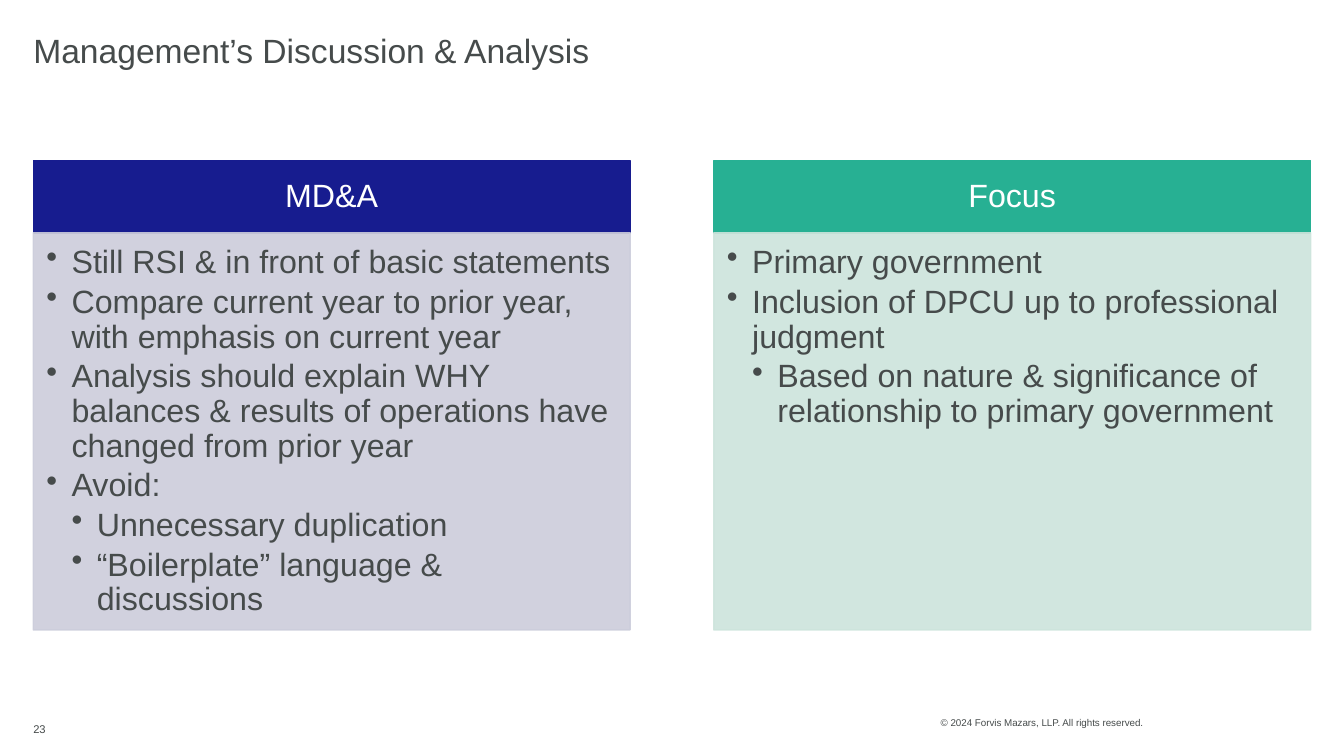
import pptx
import pptx.util
import pptx.dml.color
import pptx.enum.shapes
import pptx.enum.text
import pptx.oxml.ns
import lxml.etree

Inches = pptx.util.Inches
Pt = pptx.util.Pt
ANCHOR = pptx.enum.text.MSO_ANCHOR
ALIGN = pptx.enum.text.PP_ALIGN
qn = pptx.oxml.ns.qn

WIDTH, HEIGHT = 13.33, 7.5
MARGIN = 0.33
GUTTER = 0.83
COLUMN_W = (WIDTH - 2 * MARGIN - GUTTER) / 2
COLUMN_TOP, COLUMN_H = 1.59, 4.66
HEADER_H = 0.72
INDENT = 0.25
GREY, WHITE = "464B4B", "FFFFFF"

COLUMNS = [
    ("MD&A", "171C8F", "CCCDDB", [
        (0, "Still RSI & in front of basic statements"),
        (0, "Compare current year to prior year, with emphasis on current year"),
        (0, "Analysis should explain WHY balances & results of operations have changed from prior year"),
        (0, "Avoid:"),
        (1, "Unnecessary duplication"),
        (1, "“Boilerplate” language & discussions"),
    ]),
    ("Focus", "27B093", "CDE4DC", [
        (0, "Primary government"),
        (0, "Inclusion of DPCU up to professional judgment"),
        (1, "Based on nature & significance of relationship to primary government"),
    ]),
]


def rgb(value):
    return pptx.dml.color.RGBColor.from_string(value)


def set_frame(sp, insets, anchor):
    tf = sp.text_frame
    tf.word_wrap = True
    tf.vertical_anchor = anchor
    tf.margin_left, tf.margin_top, tf.margin_right, tf.margin_bottom = map(Inches, insets)
    return tf


def add_run(p, text, size, color):
    r = p.add_run()
    r.text = text
    r.font.name = "Arial"
    r.font.size = Pt(size)
    r.font.color.rgb = rgb(color)


def add_text(s, box, text, size, inset=0.05, spacing=None):
    sp = s.shapes.add_textbox(*map(Inches, box))
    p = set_frame(sp, (0, inset, 0, inset), ANCHOR.MIDDLE).paragraphs[0]
    p.line_spacing = spacing
    add_run(p, text, size, GREY)


def add_panel(s, box, color, opacity=100):
    sp = s.shapes.add_shape(pptx.enum.shapes.MSO_SHAPE.RECTANGLE, *map(Inches, box))
    sp.shadow.inherit = False
    sp.fill.solid()
    sp.fill.fore_color.rgb = rgb(color)
    sp.line.color.rgb = rgb(color)
    sp.line.width = Pt(1)
    if opacity < 100:
        for clr in sp.element.spPr.iter(qn("a:srgbClr")):
            lxml.etree.SubElement(clr, qn("a:alpha")).set("val", str(opacity * 1000))
    return sp


def add_bullet(p, level, text):
    p.level = level
    pPr = p._p.get_or_add_pPr()
    pPr.set("marL", str(Inches(INDENT * (level + 1))))
    pPr.set("indent", str(-Inches(INDENT)))
    lxml.etree.SubElement(pPr, qn("a:buChar")).set("char", "•")
    p.alignment = ALIGN.LEFT
    p.line_spacing = 0.9
    p.space_after = Pt(3.5)
    add_run(p, text, 23, GREY)


def add_column(s, box, heading, header_color, body_color, bullets):
    x, y, w, h = box
    header = add_panel(s, (x, y, w, HEADER_H), header_color)
    p = set_frame(header, (0.18, 0.1, 0.18, 0.1), ANCHOR.MIDDLE).paragraphs[0]
    p.alignment = ALIGN.CENTER
    p.line_spacing = 0.9
    add_run(p, heading, 23, WHITE)

    body = add_panel(s, (x, y + HEADER_H, w, h - HEADER_H), body_color, 90)
    tf = set_frame(body, (0.13, 0.13, 0.18, 0.2), ANCHOR.TOP)
    for i, (level, text) in enumerate(bullets):
        add_bullet(tf.add_paragraph() if i else tf.paragraphs[0], level, text)


def add_footer(s, box):
    x, y, w, h = box
    add_text(s, (x + 9, y, 2.2, h), "© 2024 Forvis Mazars, LLP. All rights reserved.", 7)
    add_text(s, (x, y + 0.06, 0.98, h), "23", 8)


def main():
    prs = pptx.Presentation()
    prs.slide_width, prs.slide_height = Inches(WIDTH), Inches(HEIGHT)
    s = prs.slides.add_slide(prs.slide_layouts[6])
    add_text(s, (MARGIN, MARGIN, 6.18, 0.39), "Management’s Discussion & Analysis", 24, 0, 0.9)
    for i, column in enumerate(COLUMNS):
        x = MARGIN + i * (COLUMN_W + GUTTER)
        add_column(s, (x, COLUMN_TOP, COLUMN_W, COLUMN_H), *column)
    add_footer(s, (MARGIN, 7.02, WIDTH - 2 * MARGIN, 0.3))
    prs.save("out.pptx")


if __name__ == "__main__":
    main()
